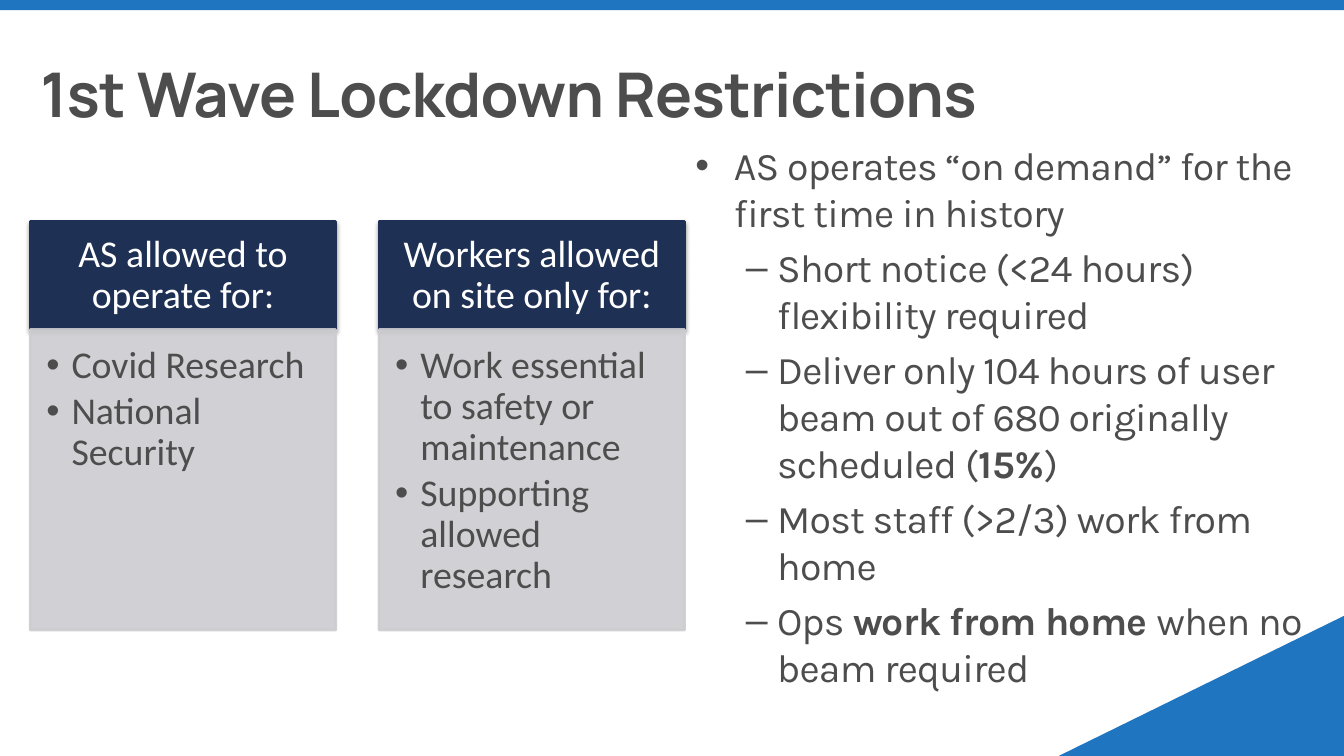
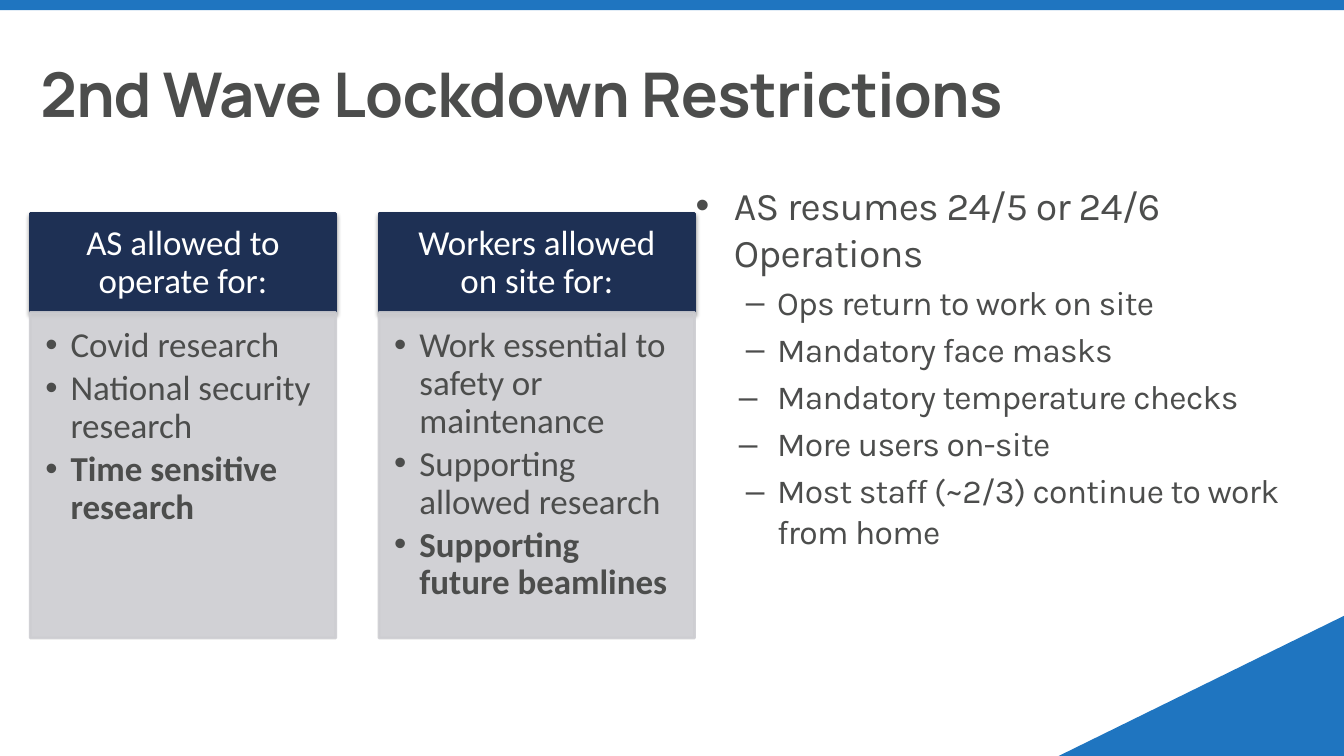
import pptx
import pptx.util
import pptx.dml.color
import pptx.enum.shapes
import pptx.enum.text
import pptx.oxml.ns
from lxml import etree

Inches = pptx.util.Inches
Pt = pptx.util.Pt
RGBColor = pptx.dml.color.RGBColor
Shape = pptx.enum.shapes.MSO_SHAPE
Align = pptx.enum.text.PP_ALIGN
Anchor = pptx.enum.text.MSO_ANCHOR
qn = pptx.oxml.ns.qn

BLUE = RGBColor(0x1F, 0x75, 0xC0)
NAVY = RGBColor(0x1E, 0x30, 0x54)
GREY = RGBColor(0xCD, 0xCD, 0xD1)
DARK = RGBColor(0x4C, 0x4D, 0x4C)
WHITE = RGBColor(0xFF, 0xFF, 0xFF)

# Text styles: paragraph values, then run values
TITLE = dict(para=dict(alignment=Align.LEFT, line_spacing=0.9),
             font=dict(name="Manrope", size=Pt(44), bold=True), color=DARK, track=-50)
BODY = dict(para=dict(alignment=Align.LEFT),
            font=dict(name="Karla"), color=DARK, track=-50)
HEAD = dict(para=dict(alignment=Align.CENTER, line_spacing=0.9),
            font=dict(name="Calibri"), color=WHITE, track=0)
LIST = dict(para=dict(alignment=Align.LEFT, line_spacing=0.9, level=1),
            font=dict(name="Calibri"), color=DARK, track=0)


def write(para, text, style, size, bullet=None, left=0, hang=0):
    """Fill a paragraph; text between asterisks is bold."""
    for key, value in style["para"].items():
        setattr(para, key, value)
    if bullet:
        props = para._p.get_or_add_pPr()
        props.set("marL", str(Inches(left)))
        props.set("indent", str(-Inches(hang)))
        etree.SubElement(props, qn("a:buFont"), typeface="Arial")
        etree.SubElement(props, qn("a:buChar"), char=bullet)
    for i, part in enumerate(text.split("*")):
        if not part:
            continue
        run = para.add_run()
        run.text = part
        format = dict(size=Pt(size), bold=i % 2 == 1) | style["font"]
        for key, value in format.items():
            setattr(run.font, key, value)
        run.font.color.rgb = style["color"]
        if style["track"]:
            run._r.get_or_add_rPr().set("spc", str(style["track"]))


def block(slide, kind, box, color, line=0):
    """Add a flat shape in one colour."""
    shape = slide.shapes.add_shape(kind, *[Inches(v) for v in box])
    shape.shadow.inherit = False
    shape.fill.solid()
    shape.fill.fore_color.rgb = color
    if line:
        shape.line.color.rgb = color
        shape.line.width = Pt(line)
    else:
        shape.line.fill.background()
    return shape


# Slide content: points are text, size, left indent, hang
SLIDES = [
    dict(
        title="1st Wave Lockdown Restrictions",
        body=(6.8, 1.35, 6.23, 5.6),
        points=[
            ("AS operates “on demand” for the first time in history", 28, 0.38, 0.38),
            ("Short notice (<24 hours) flexibility required", 28, 0.81, 0.31),
            ("Deliver only 104 hours of user beam out of 680 originally scheduled (*15%*)",
             28, 0.81, 0.31),
            ("Most staff (>2/3) work from home", 28, 0.81, 0.31),
            ("Ops *work from home *when no beam required", 28, 0.81, 0.31),
        ],
        top=2.2, split=3.27, end=6.25, size=27,
        pads=(0.21, 0.12, 0.21, 0.12), insets=(0.16, 0.16, 0.21, 0.24),
        cards=[
            (0.3, 3.03, "AS allowed to operate for:",
             ["Covid Research", "National Security"]),
            (3.76, 3.03, "Workers allowed on site only for:",
             ["Work essential to safety or maintenance", "Supporting allowed research"]),
        ],
    ),
    dict(
        title="2nd Wave Lockdown Restrictions",
        body=(6.8, 1.75, 6.01, 4.95),
        points=[
            ("AS resumes 24/5 or 24/6 Operations", 28, 0.38, 0.38),
            ("Ops return to work on site", 24, 0.81, 0.31),
            ("Mandatory face masks", 24, 0.81, 0.31),
            ("Mandatory temperature checks", 24, 0.81, 0.38),
            ("More users on-site", 24, 0.81, 0.38),
            ("Most staff (~2/3) continue to work from home", 24, 0.81, 0.31),
        ],
        top=2.12, split=3.1, end=6.33, size=25,
        pads=(0.19, 0.11, 0.19, 0.11), insets=(0.15, 0.15, 0.19, 0.22),
        cards=[
            (0.3, 3.03, "AS allowed to operate for:",
             ["Covid research", "National security research", "*Time sensitive research*"]),
            (3.76, 3.13, "Workers allowed on site for:",
             ["Work essential to safety or maintenance", "Supporting allowed research",
              "*Supporting future beamlines*"]),
        ],
    ),
]

deck = pptx.Presentation()
deck.slide_width = Inches(13.33)
deck.slide_height = Inches(7.5)
layout = deck.slide_layouts[5]
SIDES = ("margin_left", "margin_top", "margin_right", "margin_bottom")

for number, data in enumerate(SLIDES):
    slide = deck.slides.add_slide(layout)

    # Corner and top band, moved once to the layout
    if number == 0:
        corner = block(slide, Shape.RIGHT_TRIANGLE, (10.5, 6.11, 2.83, 1.39), BLUE)
        corner.element.spPr.find(qn("a:xfrm")).set("flipH", "1")
        band = block(slide, Shape.RECTANGLE, (0, 0, 13.33, 0.1), BLUE)
        for shape in (corner, band):
            layout.shapes.element.append(shape.element)

    # Title
    title = slide.shapes.title
    title.left, title.top, title.width, title.height = [
        Inches(v) for v in (0.3, 0.1, 12.36, 1.25)]
    frame = title.text_frame
    frame.auto_size = pptx.enum.text.MSO_AUTO_SIZE.NONE
    frame.vertical_anchor = Anchor.BOTTOM
    write(frame.paragraphs[0], data["title"], TITLE, 44)

    # Points on the right
    frame = slide.shapes.add_textbox(*[Inches(v) for v in data["body"]]).text_frame
    frame.word_wrap = True
    for i, (text, size, left, hang) in enumerate(data["points"]):
        para = frame.add_paragraph() if i else frame.paragraphs[0]
        if i:
            para.level = 1
            para.space_before = Pt(size * 0.2)
        write(para, text, BODY, size, "–" if i else "•", left, hang)

    # Cards: a dark header over a grey list
    top, split, end, size = [data[key] for key in ("top", "split", "end", "size")]
    for left, width, name, items in data["cards"]:
        head = block(slide, Shape.RECTANGLE, (left, top, width, split - top), NAVY, 2)
        effect = head.element.spPr.find(qn("a:effectLst"))
        shade = etree.SubElement(effect, qn("a:outerShdw"), blurRad=str(Pt(3.1)),
                                 dist=str(Pt(1.6)), dir="5400000", rotWithShape="0")
        tint = etree.SubElement(shade, qn("a:srgbClr"), val="000000")
        etree.SubElement(tint, qn("a:alpha"), val="38000")

        panel = block(slide, Shape.RECTANGLE, (left, split, width, end - split), GREY, 2)
        for tint in panel.element.spPr.iter(qn("a:srgbClr")):
            etree.SubElement(tint, qn("a:alpha"), val="90000")

        for shape, pads, anchor in ((head, data["pads"], Anchor.MIDDLE),
                                    (panel, data["insets"], Anchor.TOP)):
            frame = shape.text_frame
            frame.word_wrap = True
            frame.vertical_anchor = anchor
            for side, pad in zip(SIDES, pads):
                setattr(frame, side, Inches(pad))

        write(head.text_frame.paragraphs[0], name, HEAD, size)
        frame = panel.text_frame
        for i, text in enumerate(items):
            para = frame.add_paragraph() if i else frame.paragraphs[0]
            para.space_after = Pt(size * 0.15)
            write(para, text, LIST, size, "•", 0.25, 0.25)

deck.save("out.pptx")
